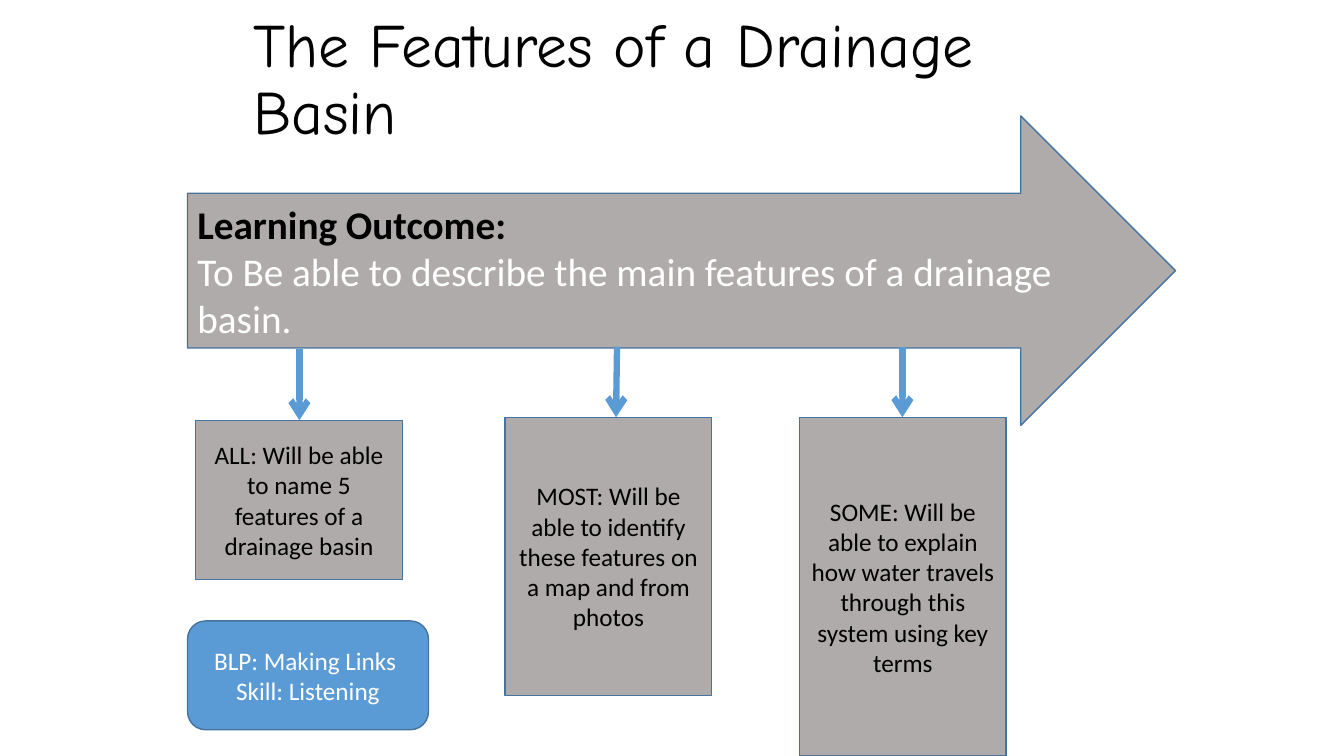
"""Build the drainage basin learning outcome slide."""
from pptx import Presentation
from pptx import util as u
from pptx.dml.color import RGBColor
from pptx.enum import shapes, text
from pptx.oxml import ns, xmlchemy

PX = 9144
BLACK = RGBColor(0x00, 0x00, 0x00)
WHITE = RGBColor(0xFF, 0xFF, 0xFF)
GREY = RGBColor(0xAF, 0xAB, 0xAB)
BLUE = RGBColor(0x5B, 0x9B, 0xD5)
OUTLINE = RGBColor(0x43, 0x73, 0x9E)
KIND = shapes.MSO_SHAPE

LEVELS = [
    ((194, 417, 205, 158), "ALL: Will be able to name 5 features of a drainage basin"),
    ((501, 414, 205, 276),
     "MOST: Will be able to identify these features on a map and from photos"),
    ((793, 414, 205, 336),
     "SOME: Will be able to explain how water travels through this system using key terms"),
]
LINKS = [((297, 346), (297, 417)), ((612, 344), (611, 414)), ((895, 344), (895, 414))]


def px(*lengths):
    """Turn px lengths into EMU."""
    return [u.Emu(length * PX) for length in lengths]


def add_run(paragraph, words, size, color, font="Calibri", bold=False):
    """Add one formatted run to a paragraph."""
    run = paragraph.add_run()
    run.text = words
    run.font.name = font
    run.font.size = u.Pt(size)
    run.font.bold = bold
    run.font.color.rgb = color


def set_title(slide, words):
    """Place and fill the title placeholder."""
    title = slide.shapes.title
    title.left, title.top, title.width, title.height = px(241, 0, 850, 161)
    frame = title.text_frame
    frame.word_wrap = True
    frame.auto_size = text.MSO_AUTO_SIZE.NONE
    frame.vertical_anchor = text.MSO_ANCHOR.MIDDLE
    heading = frame.paragraphs[0]
    heading.alignment = text.PP_ALIGN.LEFT
    heading.line_spacing = 0.9
    add_run(heading, words, 44, BLACK, "Comic Neue")


def add_panel(slide, kind, box, fill, lines, size=18, align=text.PP_ALIGN.CENTER):
    """Add an outlined shape holding lines of (words, color, bold)."""
    panel = slide.shapes.add_shape(kind, *px(*box))
    panel.shadow.inherit = False
    panel.fill.solid()
    panel.fill.fore_color.rgb = fill
    panel.line.color.rgb = OUTLINE
    panel.line.width = u.Pt(1)
    frame = panel.text_frame
    frame.word_wrap = True
    frame.vertical_anchor = text.MSO_ANCHOR.MIDDLE
    for index, (words, color, bold) in enumerate(lines):
        paragraph = frame.add_paragraph() if index else frame.paragraphs[0]
        paragraph.alignment = align
        add_run(paragraph, words, size, color, bold=bold)


def add_link(slide, start, end):
    """Add a thick blue arrow between two points."""
    link = slide.shapes.add_connector(shapes.MSO_CONNECTOR.STRAIGHT, *px(*start, *end))
    link.line.color.rgb = BLUE
    link.line.width = u.Pt(4.5)
    head = xmlchemy.OxmlElement("a:tailEnd")
    head.set("type", "arrow")
    properties = link._element.spPr
    properties.find(ns.qn("a:ln")).append(head)
    properties.append(xmlchemy.OxmlElement("a:effectLst"))


def main():
    """Build and save the slide."""
    deck = Presentation()
    deck.slide_width, deck.slide_height = px(1333, 750)
    slide = deck.slides.add_slide(deck.slide_layouts[5])
    set_title(slide, "The Features of a Drainage Basin")
    outcome = [
        ("Learning Outcome:", BLACK, True),
        ("To Be able to describe the main features of a drainage basin.", WHITE, False),
    ]
    add_panel(slide, KIND.RIGHT_ARROW, (186, 115, 980, 307), GREY, outcome,
              size=28, align=text.PP_ALIGN.LEFT)
    for box, words in LEVELS:
        add_panel(slide, KIND.RECTANGLE, box, GREY, [(words, BLACK, False)])
    for start, end in LINKS:
        add_link(slide, start, end)
    skills = [("BLP: Making Links ", WHITE, False), ("Skill: Listening", WHITE, False)]
    add_panel(slide, KIND.ROUNDED_RECTANGLE, (186, 616, 239, 108), BLUE, skills)
    deck.save("out.pptx")


if __name__ == "__main__":
    main()
